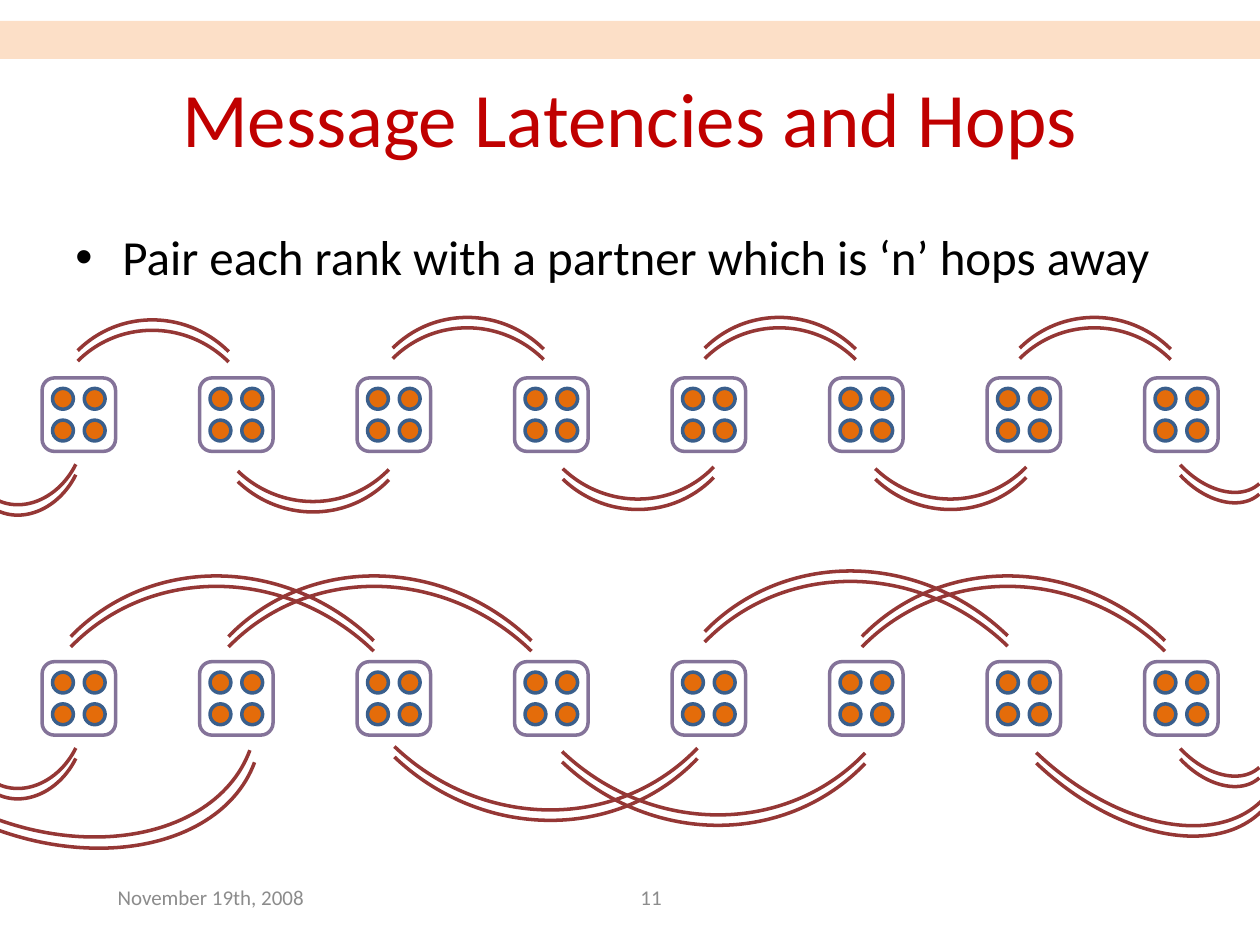
from dataclasses import dataclass

import pptx
import pptx.dml.color
import pptx.enum.shapes
import pptx.enum.text
import pptx.oxml.ns
import pptx.util
from lxml import etree
from pptx.util import Cm, Pt

SHAPE = pptx.enum.shapes.MSO_SHAPE
ALIGN = pptx.enum.text.PP_ALIGN
ANCHOR = pptx.enum.text.MSO_ANCHOR
qn = pptx.oxml.ns.qn
rgb = pptx.dml.color.RGBColor.from_string


@dataclass(frozen=True)
class Theme:
    font: str = "Calibri"
    title: str = "C00000"
    body: str = "000000"
    footer: str = "8C8C8C"
    band: str = "FAC090"
    core: str = "E46C0A"
    core_edge: str = "3A5F8C"
    node_edge: str = "604A7B"
    link: str = "953735"
    title_size: int = 44
    body_size: int = 28
    footer_size: int = 12
    line_width: int = 2


theme = Theme()


def add_text(text, box, *, size, color, align=ALIGN.LEFT, anchor=ANCHOR.MIDDLE, bullet_indent=None):
    frame = slide.shapes.add_textbox(*map(Cm, box)).text_frame
    frame.word_wrap = True
    frame.vertical_anchor = anchor
    paragraph = frame.paragraphs[0]
    paragraph.text = text
    paragraph.alignment = align
    if bullet_indent:
        properties = paragraph._p.get_or_add_pPr()
        properties.set("marL", str(Cm(bullet_indent)))
        properties.set("indent", str(-Cm(bullet_indent)))
        etree.SubElement(properties, qn("a:buFont"), typeface="Arial")
        etree.SubElement(properties, qn("a:buChar"), char="•")
    paragraph.font.name = theme.font
    paragraph.font.size = Pt(size)
    paragraph.font.color.rgb = rgb(color)


def add_shape(kind, box, *, fill=None, line=None, opacity=100, rotation=0):
    shape = slide.shapes.add_shape(kind, *map(Cm, box))
    shape.shadow.inherit = False
    shape.rotation = rotation
    if fill:
        shape.fill.solid()
        shape.fill.fore_color.rgb = rgb(fill)
    else:
        shape.fill.background()
    if line:
        shape.line.color.rgb = rgb(line)
        shape.line.width = Pt(theme.line_width)
    else:
        shape.line.fill.background()
    if opacity < 100:
        for color in shape.element.spPr.iter(qn("a:srgbClr")):
            etree.SubElement(color, qn("a:alpha"), val=str(opacity * 1000))


slide_width, slide_height = 25.4, 19.05
deck = pptx.Presentation()
deck.slide_width, deck.slide_height = Cm(slide_width), Cm(slide_height)
slide = deck.slides.add_slide(deck.slide_layouts[6])

add_shape(SHAPE.RECTANGLE, (0, 0.42, slide_width, 0.77), fill=theme.band, opacity=50)
add_text("Message Latencies and Hops", (1.27, 0.76, 22.86, 3.18),
         size=theme.title_size, color=theme.title, align=ALIGN.CENTER)
add_text("Pair each rank with a partner which is ‘n’ hops away", (1.27, 4.45, 22.86, 12.57),
         size=theme.body_size, color=theme.body, anchor=ANCHOR.TOP, bullet_indent=0.95)
add_text("November 19th, 2008", (2.12, 17.58, 5.93, 1.01),
         size=theme.footer_size, color=theme.footer)
add_text("11", (10.16, 17.58, 5.93, 1.01),
         size=theme.footer_size, color=theme.footer, align=ALIGN.CENTER)

# Two rows of eight nodes, each with four cores
node_count = 8
node_pitch = slide_width / node_count
node_size, core_size, core_inset, core_pitch = 1.48, 0.42, 0.21, 0.64
one_hop_top, two_hop_top = 7.62, 13.34
for row_top in (one_hop_top, two_hop_top):
    for node in range(node_count):
        node_left = 0.85 + node * node_pitch
        add_shape(SHAPE.ROUNDED_RECTANGLE, (node_left, row_top, node_size, node_size),
                  line=theme.node_edge, opacity=77)
        for core in range(4):
            core_row, core_column = divmod(core, 2)
            add_shape(SHAPE.OVAL,
                      (node_left + core_inset + core_column * core_pitch,
                       row_top + core_inset + core_row * core_pitch, core_size, core_size),
                      fill=theme.core, line=theme.core_edge)

# Links: width, height, rotation, growth of the second line, (left, top) of each pair
row_gap = two_hop_top - one_hop_top
links = [
    (4.27, 4.34, 314.9, 0, [(0.97, 6.43), (7.32, 6.38), (13.61, 6.38), (19.96, 6.38)]),
    (4.27, 4.34, 133.9, 0, [(4.14, 5.79), (10.69, 5.74), (16.99, 5.74)]),
    (1.83, 2.72, 137.4, 0, [(23.55, 7.39), (23.55, 7.39 + row_gap)]),
    (2.69, 2.21, 116.1, 0, [(-0.81, 7.77), (-0.81, 7.77 + row_gap)]),
    (8.38, 8.89, 314.1, 0, [(0.43, 11.48), (3.61, 11.48), (13.21, 11.38), (16.38, 11.48)]),
    (8.38, 8.89, 133.6, 0, [(6.65, 7.57), (10.03, 7.67)]),
    (4.95, 7.92, 133.6, 0, [(20.12, 9.42)]),
    (6.12, 8.64, 110.1, 0.2, [(-2.08, 9.32)]),
]
line_gap = 0.21
for width, height, rotation, growth, pairs in links:
    for left, top in pairs:
        for box in ((left, top, width, height),
                    (left, top + line_gap - growth / 2, width, height + growth)):
            add_shape(SHAPE.ARC, box, line=theme.link, rotation=rotation)

deck.save("out.pptx")
